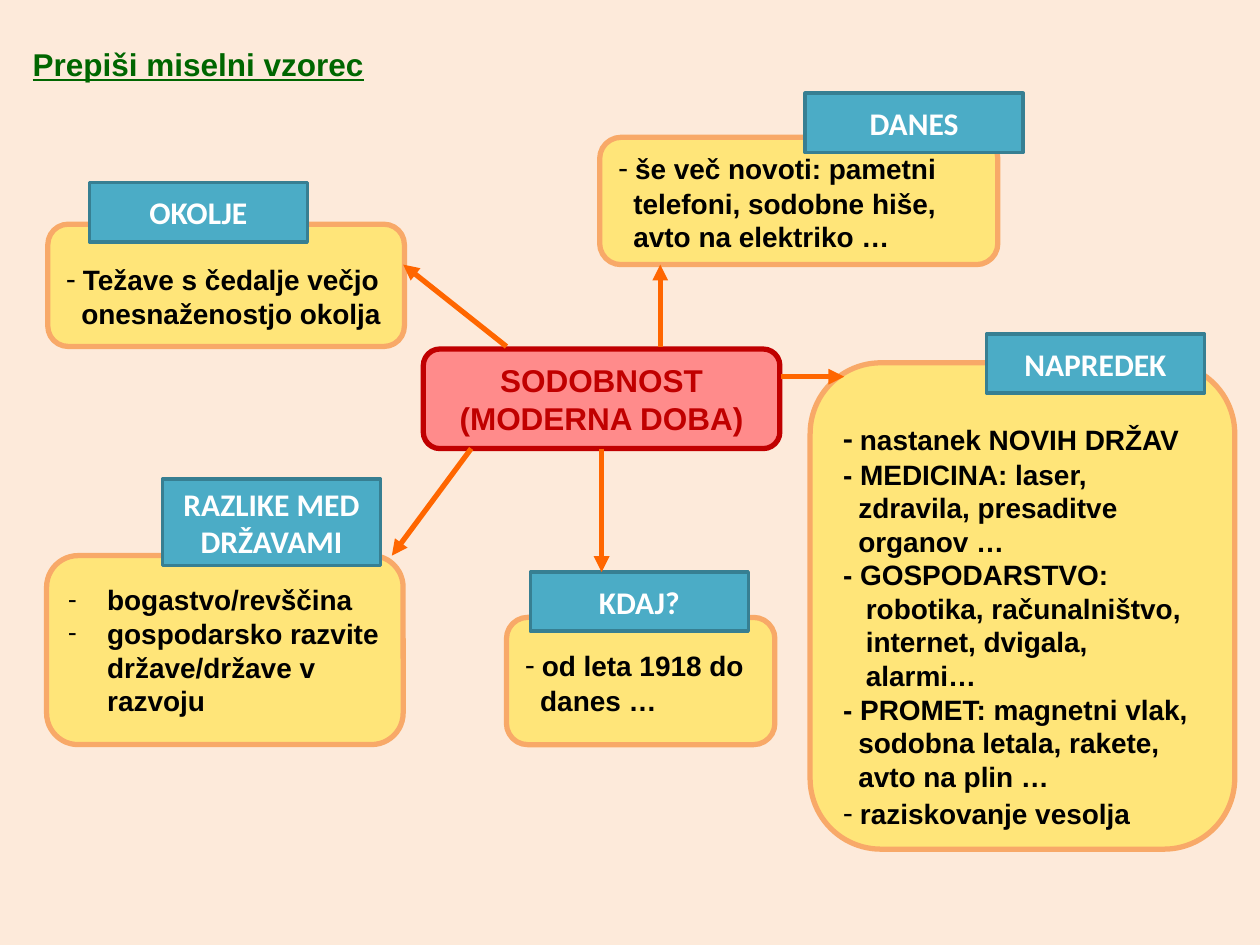
from lxml.etree import SubElement
from pptx import Presentation
from pptx.dml.color import RGBColor
from pptx.enum.shapes import MSO_CONNECTOR as Connector, MSO_SHAPE as Shape
from pptx.enum.text import MSO_ANCHOR as Anchor, PP_ALIGN as Align
from pptx.oxml.ns import qn
from pptx.util import Inches, Pt

COLUMNS, ROWS = 100, 75
CELL = Inches(0.1)
LABEL_WIDTH, LABEL_HEIGHT = 17.3, 4.7
COLORS = {
    "background": "FDEADA", "title": "006600", "text": "000000", "white": "FFFFFF",
    "root": "FF8B8B", "root_edge": "C00000", "body": "FFE579", "body_edge": "F8A968",
    "label": "4BACC6", "label_edge": "377F92", "arrow": "FF6600",
}
TITLE = {"name": "Arial", "size": Pt(18), "bold": True, "underline": True}
ROOT = {"name": "Arial", "size": Pt(18), "bold": True}
LABEL = {"name": "Calibri", "size": Pt(18), "bold": True}
BODY = {"name": "Arial", "size": Pt(16), "bold": True}
DASHES = {
    "light": {"name": "Calibri", "size": Pt(18), "bold": False},
    "heavy": {"name": "Calibri", "size": Pt(18), "bold": True},
    "same": BODY,
}
FIRST, SECOND = Inches(0.12), Inches(0.18)
BULLET_INDENT = Inches(0.31)

TOPICS = [
    {"label": "OKOLJE", "label_at": (7.1, 14.5), "body_at": (3.8, 17.8, 28.3, 9.7),
     "top_inset": Inches(0.2),
     "lines": [("light", "Težave s čedalje večjo"),
               (FIRST, "onesnaženostjo okolja")]},
    {"label": "RAZLIKE MED DRŽAVAMI", "label_at": (12.9, 38), "label_height": 6.9,
     "body_at": (3.7, 44.1, 28.3, 15),
     "lines": [("bullet", "bogastvo/revščina"),
               ("bullet", "gospodarsko razvite države/države v razvoju")]},
    {"label": "KDAJ?", "label_at": (42.1, 45.4), "body_at": (40.2, 49, 21.3, 10.1),
     "lines": [("light", "od leta 1918 do"), (FIRST, "danes …")]},
    {"label": "NAPREDEK", "label_at": (78.3, 26.5), "body_at": (64.3, 28.8, 33.7, 38.6),
     "top_inset": Inches(0.35),
     "lines": [("heavy", "nastanek NOVIH DRŽAV"),
               ("same", "MEDICINA: laser,"),
               (FIRST, "zdravila, presaditve"),
               (FIRST, "organov …"),
               ("same", "GOSPODARSTVO:"),
               (SECOND, "robotika, računalništvo,"),
               (SECOND, "internet, dvigala,"),
               (SECOND, "alarmi…"),
               ("same", "PROMET: magnetni vlak,"),
               (FIRST, "sodobna letala, rakete,"),
               (FIRST, "avto na plin …"),
               ("light", "raziskovanje vesolja")]},
    {"label": "DANES", "label_at": (63.9, 7.4), "body_at": (47.6, 10.9, 31.6, 10.1),
     "lines": [("light", "še več novoti: pametni"),
               (FIRST, "telefoni, sodobne hiše,"),
               (FIRST, "avto na elektriko …")]},
]
ARROWS = [
    (40.2, 27.5, 32, 21),
    (52.4, 27.5, 52.4, 21),
    (37.4, 35.6, 31.1, 44.1),
    (62, 29.9, 67, 29.9),
]
CENTER_ARROW = (47.75, 35.6, 47.75, 45.4)


def cells(*values):
    """Turn grid units into slide lengths."""
    return [round(value * CELL) for value in values]


def color(name):
    """Look up a named colour."""
    return RGBColor.from_string(COLORS[name])


def add_span(para, text, style, ink):
    """Append a formatted run to a paragraph."""
    span = para.add_run()
    span.text = text
    for key, value in style.items():
        setattr(span.font, key, value)
    span.font.color.rgb = color(ink)


def add_box(slide, preset, place, fill, edge_width):
    """Draw a filled and outlined box with middle-anchored text."""
    box = slide.shapes.add_shape(preset, *cells(*place))
    box.shadow.inherit = False
    box.fill.solid()
    box.fill.fore_color.rgb = color(fill)
    box.line.color.rgb = color(f"{fill}_edge")
    box.line.width = Pt(edge_width)
    box.text_frame.word_wrap = True
    box.text_frame.vertical_anchor = Anchor.MIDDLE
    return box


def add_paragraphs(frame, count, align):
    """Return the given number of aligned paragraphs of a text frame."""
    paras = [frame.paragraphs[0]] + [frame.add_paragraph() for _ in range(count - 1)]
    for para in paras:
        para.alignment = align
    return paras


def add_centered_text(box, lines, style, ink):
    """Write centred lines in a box."""
    for para, line in zip(add_paragraphs(box.text_frame, len(lines), Align.CENTER), lines):
        add_span(para, line, style, ink)


def indent(para, left, hanging=0):
    """Set the left margin and hanging indent of a paragraph."""
    props = para._p.get_or_add_pPr()
    props.set("marL", str(left))
    props.set("indent", str(-hanging))
    return props


def add_line_text(para, kind, text):
    """Write one line as a dashed, bulleted or indented paragraph."""
    if kind == "bullet":
        props = indent(para, BULLET_INDENT, BULLET_INDENT)
        SubElement(props, qn("a:buFont"), typeface="Calibri")
        SubElement(props, qn("a:buChar"), char="-")
    elif kind in DASHES:
        add_span(para, "- ", DASHES[kind], "text")
    else:
        indent(para, kind)
    add_span(para, text, BODY, "text")


def add_topic(slide, topic):
    """Draw a topic body with its label on top."""
    body = add_box(slide, Shape.ROUNDED_RECTANGLE, topic["body_at"], "body", 3)
    body.text_frame.margin_top = topic.get("top_inset", Inches(0.05))
    lines = topic["lines"]
    paras = add_paragraphs(body.text_frame, len(lines), Align.LEFT)
    for para, (kind, text) in zip(paras, lines):
        add_line_text(para, kind, text)
    place = (*topic["label_at"], LABEL_WIDTH, topic.get("label_height", LABEL_HEIGHT))
    label = add_box(slide, Shape.RECTANGLE, place, "label", 2)
    add_centered_text(label, [topic["label"]], LABEL, "white")


def add_arrow(slide, place):
    """Draw a straight arrow between two grid points."""
    arrow = slide.shapes.add_connector(Connector.STRAIGHT, *cells(*place))
    arrow.line.color.rgb = color("arrow")
    arrow.line.width = Pt(3)
    SubElement(arrow.line._get_or_add_ln(), qn("a:tailEnd"), type="triangle")
    SubElement(arrow._element.spPr, qn("a:effectLst"))
    return arrow


def add_title(slide, text):
    """Place and format the slide title."""
    title = slide.shapes.title
    title.left, title.top, title.width, title.height = cells(1.6, 3.1, 89, 4)
    title.text_frame.vertical_anchor = Anchor.TOP
    para = title.text_frame.paragraphs[0]
    para.alignment = Align.LEFT
    add_span(para, text, TITLE, "title")


def main():
    """Build the mind map and save it."""
    deck = Presentation()
    deck.slide_width, deck.slide_height = cells(COLUMNS, ROWS)
    slide = deck.slides.add_slide(deck.slide_layouts[5])
    slide.background.fill.solid()
    slide.background.fill.fore_color.rgb = color("background")
    add_title(slide, "Prepiši miselni vzorec")
    root = add_box(slide, Shape.ROUNDED_RECTANGLE, (33.6, 27.7, 28.3, 7.9), "root", 3)
    add_centered_text(root, ["SODOBNOST", "(MODERNA DOBA)"], ROOT, "root_edge")
    for topic in TOPICS:
        add_topic(slide, topic)
    for place in ARROWS:
        add_arrow(slide, place)
    add_arrow(slide, CENTER_ARROW).begin_connect(root, 2)
    deck.save("out.pptx")


if __name__ == "__main__":
    main()
